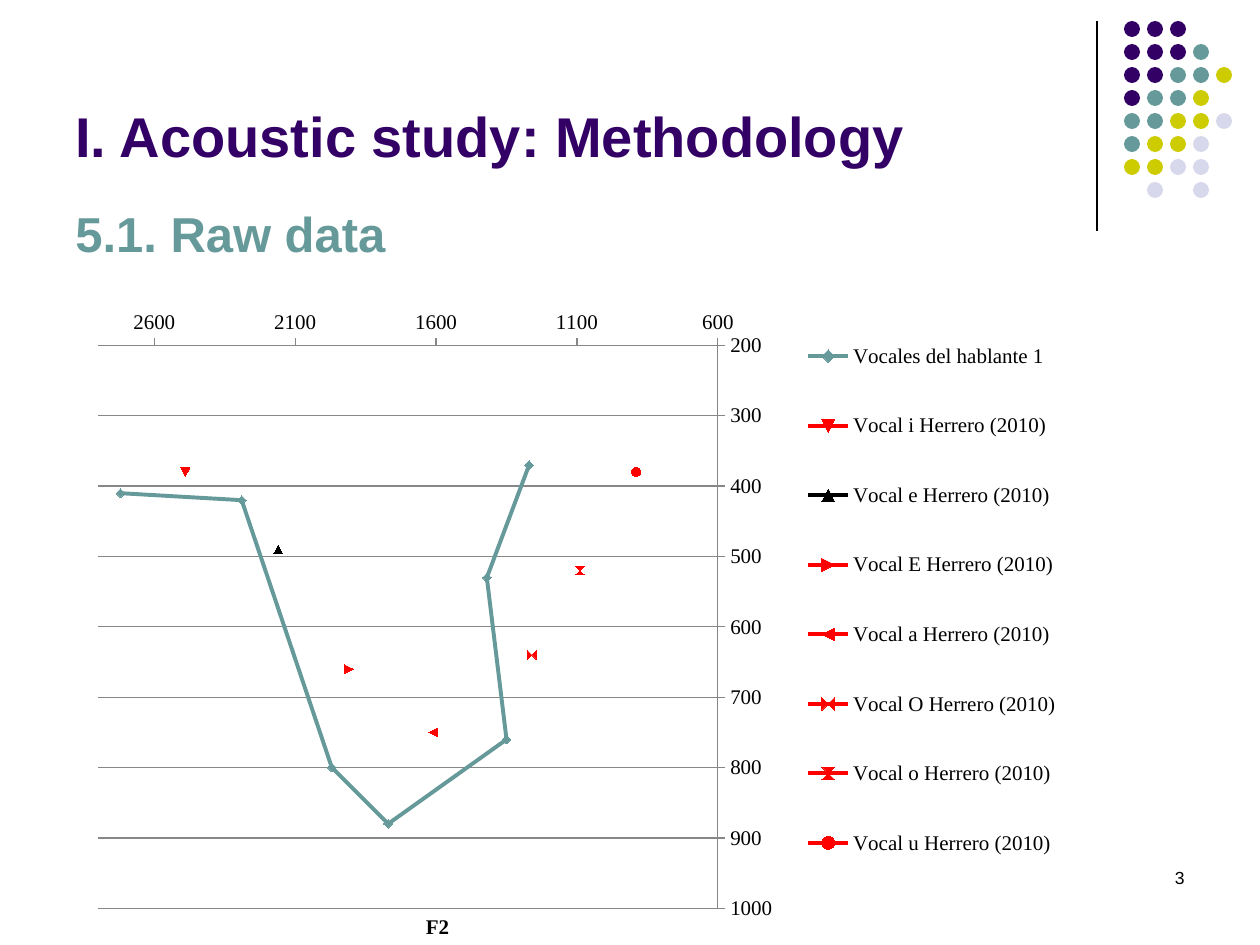
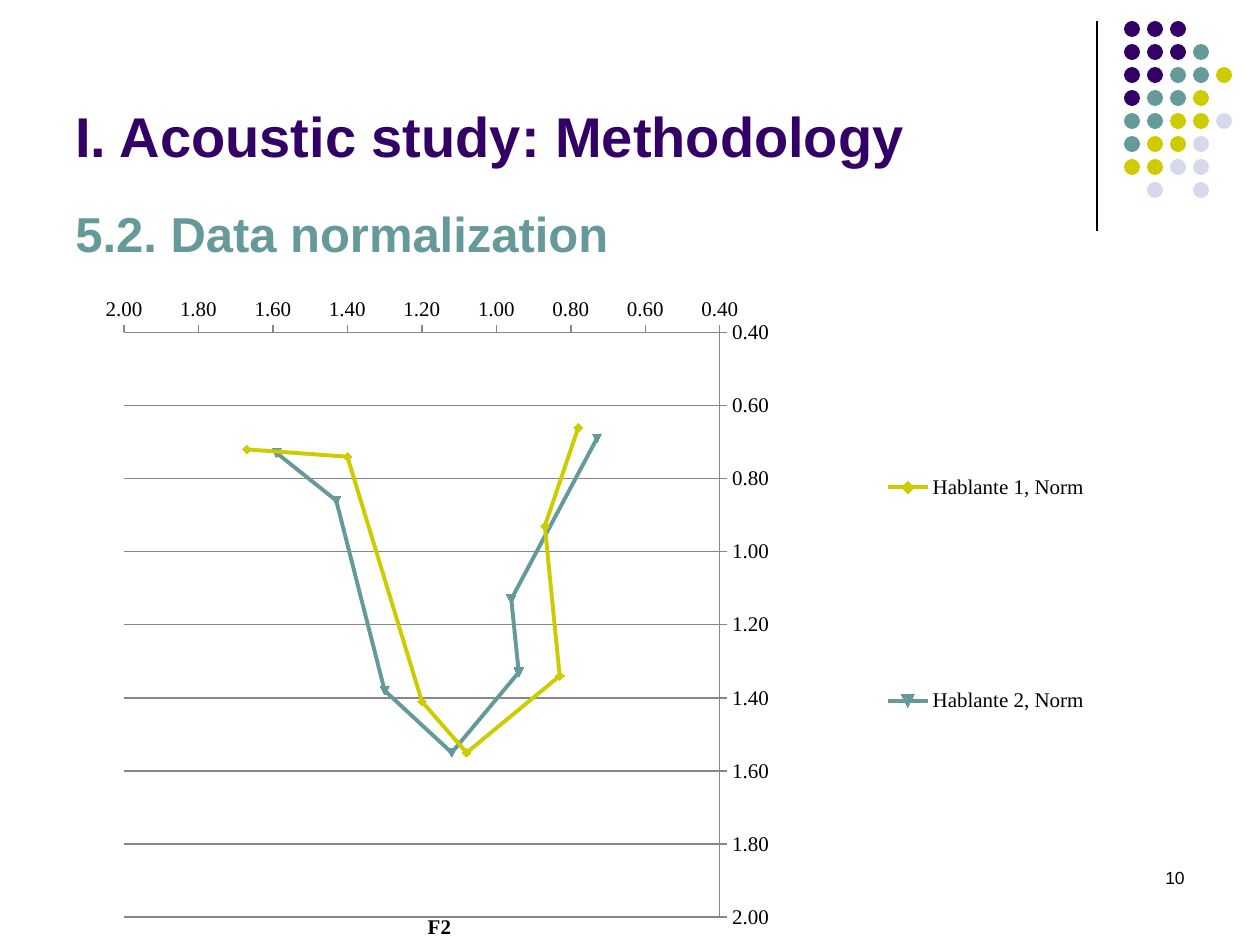
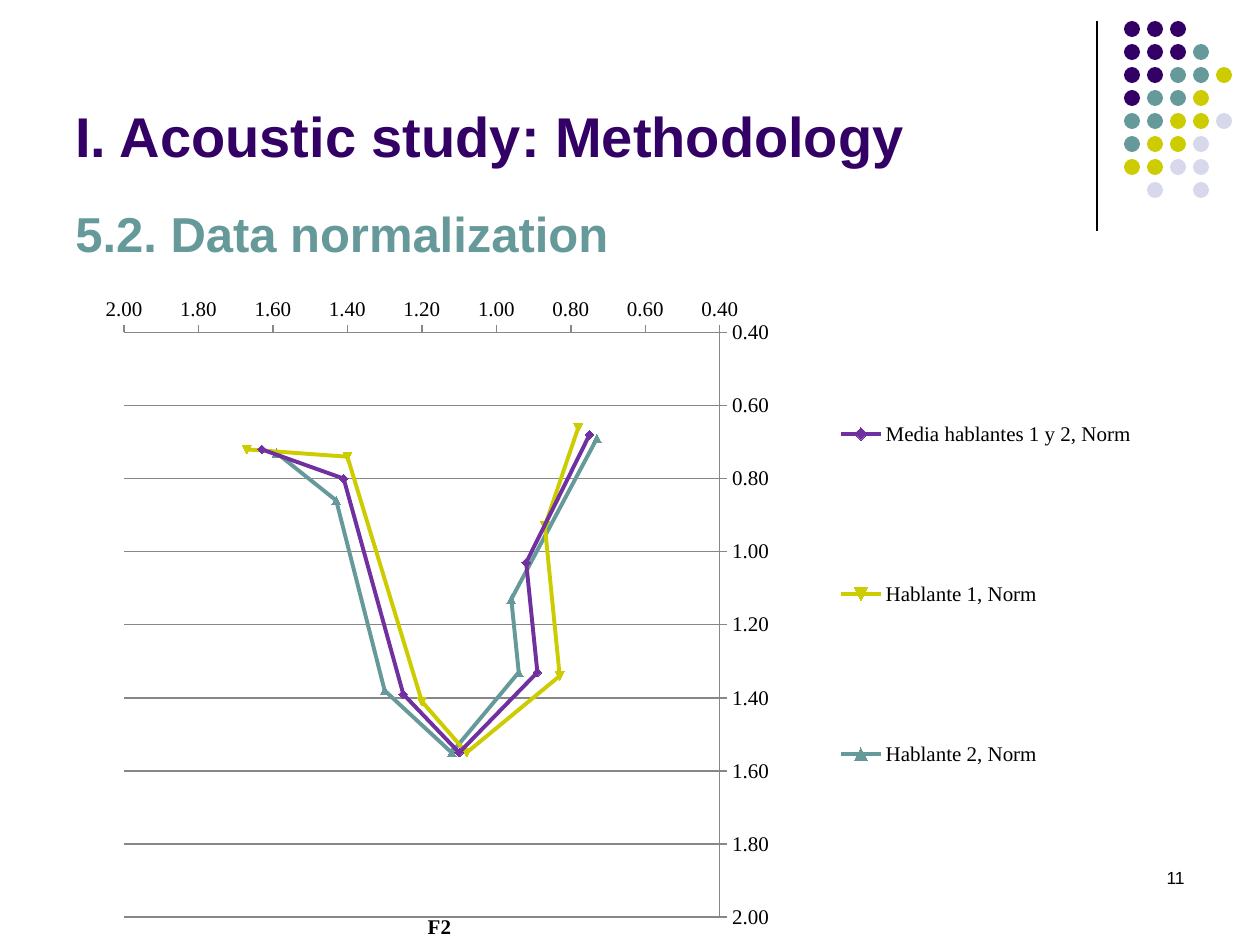
from lxml import etree
from pptx import Presentation
from pptx import util as u
from pptx.chart.data import XyChartData
from pptx.dml.color import RGBColor
from pptx.enum import chart as charts, shapes, text
from pptx.oxml import ns

PX = u.Inches(1) / 126
COLORS = {
    "purple": "330066", "teal": "669999", "lime": "CCCC00", "pale": "D8D8EC",
    "black": "000000", "red": "FF0000", "violet": "7030A0", "gray": "878787",
}
SANS, SERIF = "Arial", "Times New Roman"
DOT_ROWS = ["PPP", "PPPT", "PPTTL", "PTTL", "TTLLA", "TLLA", "LLAA", " A A"]
DOT_COLORS = {"P": "purple", "T": "teal", "L": "lime", "A": "pale"}

SPEAKER_1 = ("Hablante 1, Norm", "lime",
             [(1.67, 0.72), (1.4, 0.74), (1.2, 1.41), (1.08, 1.55),
              (0.83, 1.34), (0.87, 0.93), (0.78, 0.66)])
SPEAKER_2 = ("Hablante 2, Norm", "teal",
             [(1.59, 0.73), (1.43, 0.86), (1.3, 1.38), (1.12, 1.55),
              (0.94, 1.33), (0.96, 1.13), (0.73, 0.69)])
MEAN = ("Media hablantes 1 y 2, Norm", "violet",
        [(1.63, 0.72), (1.41, 0.8), (1.25, 1.39), (1.1, 1.55),
         (0.89, 1.33), (0.92, 1.03), (0.75, 0.68)])
REFERENCE_VOWELS = [("i", "red", 2490, 380), ("e", "black", 2160, 490),
                    ("E", "red", 1910, 660), ("a", "red", 1610, 750),
                    ("O", "red", 1260, 640), ("o", "red", 1090, 520),
                    ("u", "red", 890, 380)]
RAW_SERIES = [("Vocales del hablante 1", "teal",
               [(2720, 410), (2290, 420), (1970, 800), (1770, 880),
                (1350, 760), (1420, 530), (1270, 370)])]
RAW_SERIES += [(f"Vocal {vowel} Herrero (2010)", color, [(f2, f1)])
               for vowel, color, f2, f1 in REFERENCE_VOWELS]

# Regions are (left, top, width, height); those inside a chart are relative to it.
RAW_STYLE = {
    "box": (54, 275, 1042, 670), "plot": (44, 71, 620, 567),
    "legend": (743, 23, 270, 608), "title": (368, 640),
    "x_axis": (600, 2800, 500), "y_axis": (200, 1000, 100), "format": "0",
}
NORM_STYLE = {
    "box": (64, 265, 1081, 680), "plot": (60, 68, 596, 589),
    "legend": (767, 20, 310, 623), "title": (360, 650),
    "x_axis": (0.4, 2, 0.2), "y_axis": (0.4, 2, 0.2), "format": "0.00",
}


def px(*lengths):
    return [u.Emu(round(length * PX)) for length in lengths]


def rgb(name):
    return RGBColor.from_string(COLORS[name])


def style_font(font, face, size, color="black", bold=False):
    font.name, font.size, font.bold = face, u.Pt(size), bold
    font.color.rgb = rgb(color)


def style_line(line, color, width):
    line.color.rgb = rgb(color)
    line.width = u.Pt(width)


def add_text(page, box, words, size, color="black", bold=False,
             align=text.PP_ALIGN.LEFT, anchor=text.MSO_ANCHOR.TOP):
    frame = page.shapes.add_textbox(*px(*box)).text_frame
    frame.word_wrap = True
    frame.vertical_anchor = anchor
    para = frame.paragraphs[0]
    para.alignment = align
    span = para.add_run()
    span.text = words
    style_font(span.font, SANS, size, color, bold)
    return para


def add_dot_ornament(page, box):
    """Vertical rule with a grid of coloured dots to its right."""
    left, top, height = box
    rule = page.shapes.add_connector(
        shapes.MSO_CONNECTOR.STRAIGHT, *px(left, top, left, top + height))
    style_line(rule.line, "black", 0.75)
    etree.SubElement(rule._element.spPr, ns.qn("a:effectLst"))
    pitch, size = 23, 16
    grid = page.shapes.add_group_shape()
    for row, keys in enumerate(DOT_ROWS):
        for column, key in enumerate(keys):
            if key == " ":
                continue
            dot = grid.shapes.add_shape(
                shapes.MSO_SHAPE.OVAL,
                *px(left + 27 + column * pitch, top + row * pitch, size, size))
            dot.shadow.inherit = False
            dot.fill.solid()
            dot.fill.fore_color.rgb = rgb(DOT_COLORS[key])
            dot.line.fill.background()


def place_chart_part(part, position, region, chart_box, inner=False):
    """Fix a part of the chart at a region given in px within the chart."""
    for old in part.findall(ns.qn("c:layout")):
        part.remove(old)
    layout = etree.Element(ns.qn("c:layout"))
    part.insert(position, layout)
    manual = etree.SubElement(layout, ns.qn("c:manualLayout"))
    settings = [("layoutTarget", "inner")] if inner else []
    settings += [("xMode", "edge"), ("yMode", "edge")]
    settings += [(key, str(round(length / chart_box[2 + index % 2], 4)))
                 for index, (key, length) in enumerate(zip("xywh", region))]
    for tag, value in settings:
        etree.SubElement(manual, ns.qn(f"c:{tag}")).set("val", value)


def style_axis(axis, limits, number_format):
    axis.minimum_scale, axis.maximum_scale, axis.major_unit = limits
    axis.reverse_order = True
    axis.crosses = charts.XL_AXIS_CROSSES.MINIMUM
    axis.major_tick_mark = charts.XL_TICK_MARK.OUTSIDE
    axis.minor_tick_mark = charts.XL_TICK_MARK.NONE
    axis.tick_label_position = charts.XL_TICK_LABEL_POSITION.NEXT_TO_AXIS
    labels = axis.tick_labels
    labels.number_format, labels.number_format_is_linked = number_format, False
    style_font(labels.font, SERIF, 12)
    style_line(axis.format.line, "gray", 0.75)


def style_series(series, color):
    series.smooth = True
    style_line(series.format.line, color, 2.25)
    marker = series.marker
    marker.style = charts.XL_MARKER_STYLE.AUTOMATIC
    marker.size = 5
    marker.format.fill.solid()
    marker.format.fill.fore_color.rgb = rgb(color)
    style_line(marker.format.line, color, 0.75)


def add_formant_chart(page, style, series_list):
    data = XyChartData()
    for name, _, points in series_list:
        series = data.add_series(name)
        for f2, f1 in points:
            series.add_data_point(f2, f1)
    box = style["box"]
    chart = page.shapes.add_chart(
        charts.XL_CHART_TYPE.XY_SCATTER_SMOOTH, *px(*box), data).chart
    style_font(chart.font, SANS, 10)
    chart.has_title = False
    plot = chart.plots[0]
    plot.vary_by_categories = False
    for series, (_, color, _) in zip(plot.series, series_list):
        style_series(series, color)

    across, down = chart.category_axis, chart.value_axis
    style_axis(across, style["x_axis"], style["format"])
    style_axis(down, style["y_axis"], style["format"])
    across.has_major_gridlines = False
    down.has_major_gridlines = True
    style_line(down.major_gridlines.format.line, "gray", 0.75)

    span = across.axis_title.text_frame.paragraphs[0].add_run()
    span.text = "F2"
    style_font(span.font, SERIF, 12, bold=True)
    chart.has_legend = True
    legend = chart.legend
    legend.position = charts.XL_LEGEND_POSITION.CORNER
    legend.include_in_layout = False
    style_font(legend.font, SERIF, 12)

    plot_area = chart._chartSpace.chart.plotArea
    place_chart_part(plot_area, 0, style["plot"], box, inner=True)
    place_chart_part(legend._element, 1, style["legend"], box)
    place_chart_part(across.axis_title._element, 1, style["title"], box)


def add_chart_page(deck, number, heading, style, series_list):
    page = deck.slides.add_slide(deck.slide_layouts[6])
    add_dot_ornament(page, (1097, 21, 210))
    add_text(page, (903, 861, 294, 63), str(number), 10,
             align=text.PP_ALIGN.RIGHT)
    add_text(page, (63, 55, 1040, 120), "I. Acoustic study: Methodology", 32,
             "purple", bold=True, anchor=text.MSO_ANCHOR.BOTTOM)
    para = add_text(page, (63, 204, 1134, 684), heading, 28, "teal", bold=True)
    para.line_spacing = 0.9
    para.space_before = u.Pt(5.6)
    add_formant_chart(page, style, series_list)


def main():
    deck = Presentation()
    deck.slide_width, deck.slide_height = px(1260, 945)
    add_chart_page(deck, 3, "5.1. Raw data", RAW_STYLE, RAW_SERIES)
    normalized = "5.2. Data normalization"
    add_chart_page(deck, 10, normalized, NORM_STYLE, [SPEAKER_1, SPEAKER_2])
    add_chart_page(deck, 11, normalized, NORM_STYLE,
                   [MEAN, SPEAKER_1, SPEAKER_2])
    deck.save("out.pptx")


if __name__ == "__main__":
    main()
